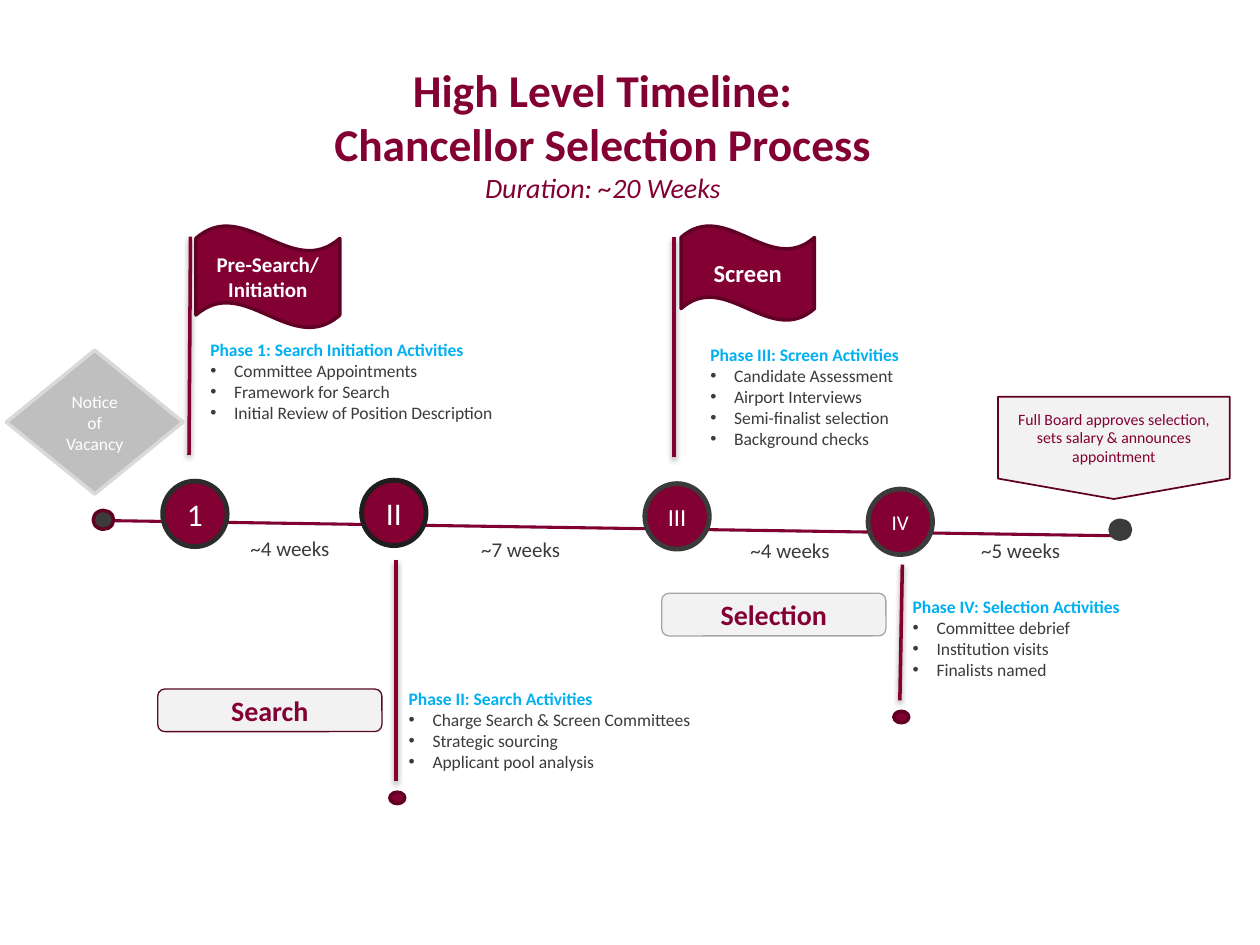
from lxml import etree
from pptx import Presentation
from pptx.dml.color import RGBColor
from pptx.enum.shapes import MSO_CONNECTOR, MSO_SHAPE
from pptx.enum.text import MSO_ANCHOR, PP_ALIGN
from pptx.oxml.ns import qn
from pptx.util import Cm, Pt

STRAIGHT = MSO_CONNECTOR.STRAIGHT
CIRCLE = MSO_SHAPE.FLOWCHART_CONNECTOR
WAVE = MSO_SHAPE.WAVE
DIAMOND = MSO_SHAPE.DIAMOND
ROUNDED = MSO_SHAPE.ROUNDED_RECTANGLE
OFFPAGE = MSO_SHAPE.FLOWCHART_OFFPAGE_CONNECTOR
CENTER, LEFT = PP_ALIGN.CENTER, PP_ALIGN.LEFT
MIDDLE = MSO_ANCHOR.MIDDLE

FONT = "Calibri"
COLORS = {
    "maroon": "820032", "axis": "7F0031", "edge": "600025", "wine": "560A22",
    "text": "3B3B3B", "charcoal": "2C2C2C", "black": "1E1E1E",
    "heading": "00B0F0", "white": "FFFFFF", "panel": "F2F2F2",
    "gray": "BFBFBF", "light": "D9D9D9", "mid": "A6A6A6",
}


def rgb(name):
    return RGBColor.from_string(COLORS[name])


def style(paragraph, size, color, bold=False, italic=False, align=CENTER):
    paragraph.alignment = align
    font = paragraph.font
    font.name, font.size = FONT, Pt(size)
    font.bold, font.italic = bold, italic
    font.color.rgb = rgb(color)


def add_block(slide, kind, box, fill, edge, width, text="", size=12,
              color="white", bold=False):
    block = slide.shapes.add_shape(kind, *map(Cm, box))
    block.shadow.inherit = False
    block.fill.solid()
    block.fill.fore_color.rgb = rgb(fill)
    block.line.color.rgb = rgb(edge)
    block.line.width = Pt(width)
    if text:
        frame = block.text_frame
        frame.word_wrap = True
        frame.vertical_anchor = MIDDLE
        frame.text = text
        style(frame.paragraphs[0], size, color, bold)


def add_line(slide, start, end, color, width, shadow=False):
    line = slide.shapes.add_connector(STRAIGHT, *map(Cm, (*start, *end)))
    line.line.color.rgb = rgb(color)
    line.line.width = Pt(width)
    effects = etree.SubElement(line._element.spPr, qn("a:effectLst"))
    if shadow:
        outer = etree.SubElement(effects, qn("a:outerShdw"), blurRad="40000",
                                 dist="20000", dir="5400000", rotWithShape="0")
        black = etree.SubElement(outer, qn("a:srgbClr"), val="000000")
        etree.SubElement(black, qn("a:alpha"), val="38000")


def add_text_frame(slide, box):
    frame = slide.shapes.add_textbox(*map(Cm, box)).text_frame
    frame.word_wrap = True
    return frame


def add_title(slide, box):
    frame = add_text_frame(slide, box)
    frame.vertical_anchor = MIDDLE
    frame.text = ("High Level Timeline:\nChancellor Selection Process\n"
                  "Duration: ~20 Weeks")
    *headline, duration = frame.paragraphs
    for paragraph in headline:
        style(paragraph, 26, "maroon", bold=True)
    style(duration, 16, "maroon", italic=True)


def add_axis(slide, left, top):
    add_line(slide, (left, top + 0.81), (left + 20.57, top + 1.12), "axis", 1.75)
    # Numbered milestones
    for x, y, numeral, size, edge in (
            (1.4, 0.02, "1", 18, "charcoal"), (5.41, 0, "II", 18, "black"),
            (11.12, 0.07, "III", 14, "text"), (15.62, 0.18, "IV", 12, "text")):
        add_block(slide, CIRCLE, (left + x, top + y, 1.3, 1.32), "maroon",
                  edge, 2.75, numeral, size)
    # Start and end dots
    for x, y, edge in ((0, 0.61, "edge"), (20.5, 0.81, "text")):
        add_block(slide, CIRCLE, (left + x, top + y, 0.41, 0.38), "text", edge, 2)
    # Durations between milestones
    for x, y, weeks in ((2.92, 0.99, 4), (7.57, 1.01, 7),
                        (13, 1.04, 4), (17.65, 1.04, 5)):
        frame = add_text_frame(slide, (left + x, top + y, 2.49, 0.76))
        frame.text = f"~{weeks} weeks"
        style(frame.paragraphs[0], 12, "text", align=LEFT)


def add_activities(slide, box, heading, activities):
    frame = add_text_frame(slide, box)
    frame.text = "\n".join((heading, *activities))
    title, *items = frame.paragraphs
    style(title, 10, "heading", bold=True, align=LEFT)
    for item in items:
        props = item._p.get_or_add_pPr()
        props.set("marL", str(Cm(0.48)))
        props.set("indent", str(-Cm(0.48)))
        etree.SubElement(props, qn("a:buFont"), typeface="Arial")
        etree.SubElement(props, qn("a:buChar"), char="•")
        style(item, 10, "text", align=LEFT)


def add_flag_phase(slide, left, top, pole, flag, name, size, notes, heading,
                   activities):
    """Phase above the axis: pole, flag and activities."""
    pole_height, lean = pole
    add_line(slide, (left, top + pole_height), (left + lean, top + 0.22),
             "maroon", 2, shadow=True)
    add_block(slide, WAVE, (left + 0.14, top, *flag), "maroon", "edge", 2,
              name, size, bold=True)
    x, y, height = notes
    add_activities(slide, (left + x, top + y, 7.34, height), heading, activities)


def add_plate_phase(slide, left, top, pole, plate_top, edge, name, notes,
                    heading, activities):
    """Phase below the axis: pole with end dot, name plate and activities."""
    pole_height, lean = pole
    add_line(slide, (left + 4.8, top + pole_height), (left + 4.8 + lean, top),
             "maroon", 2, shadow=True)
    add_block(slide, CIRCLE, (left + 4.68, top + pole_height + 0.22, 0.3, 0.23),
              "maroon", "edge", 2)
    add_block(slide, ROUNDED, (left, top + plate_top, 4.52, 0.86), "panel", edge,
              0.75, name, 16, "maroon", bold=True)
    y, width = notes
    add_activities(slide, (left + 4.81, top + y, width, 1.96), heading, activities)


def main():
    deck = Presentation()
    deck.slide_width, deck.slide_height = Cm(25.4), Cm(19.05)
    slide = deck.slides.add_slide(deck.slide_layouts[6])

    add_axis(slide, 1.88, 9.68)
    add_title(slide, (3.33, 1.37, 17.65, 2.62))

    # Phases
    add_flag_phase(
        slide, 3.81, 4.55, (4.62, 0.03), (2.9, 2.06), "Pre-Search/ Initiation",
        12, (0.18, 2.16, 1.96), "Phase 1: Search Initiation Activities",
        ("Committee Appointments", "Framework for Search",
         "Initial Review of Position Description"))
    add_plate_phase(
        slide, 3.18, 11.28, (4.47, 0), 2.61, "wine", "Search", (2.46, 6.38),
        "Phase II: Search Activities",
        ("Charge Search & Screen Committees", "Strategic sourcing",
         "Applicant pool analysis"))
    add_flag_phase(
        slide, 13.59, 4.55, (4.67, 0), (2.69, 1.91), "Screen", 14,
        (0.48, 2.26, 2.39), "Phase III: Screen Activities",
        ("Candidate Assessment", "Airport Interviews",
         "Semi-finalist selection", "Background checks"))
    add_plate_phase(
        slide, 13.34, 11.38, (2.74, 0.05), 0.58, "mid", "Selection",
        (0.51, 7.34), "Phase IV: Selection Activities",
        ("Committee debrief", "Institution visits", "Finalists named"))

    # Opening and closing events
    add_block(slide, DIAMOND, (0.13, 7.06, 3.56, 2.9), "gray", "light", 2,
              "Notice of Vacancy", 10)
    add_block(slide, OFFPAGE, (20.12, 8, 4.67, 2.06), "panel", "edge", 1,
              "Full Board approves selection, sets salary & announces appointment",
              9, "maroon")

    deck.save("out.pptx")


if __name__ == "__main__":
    main()
